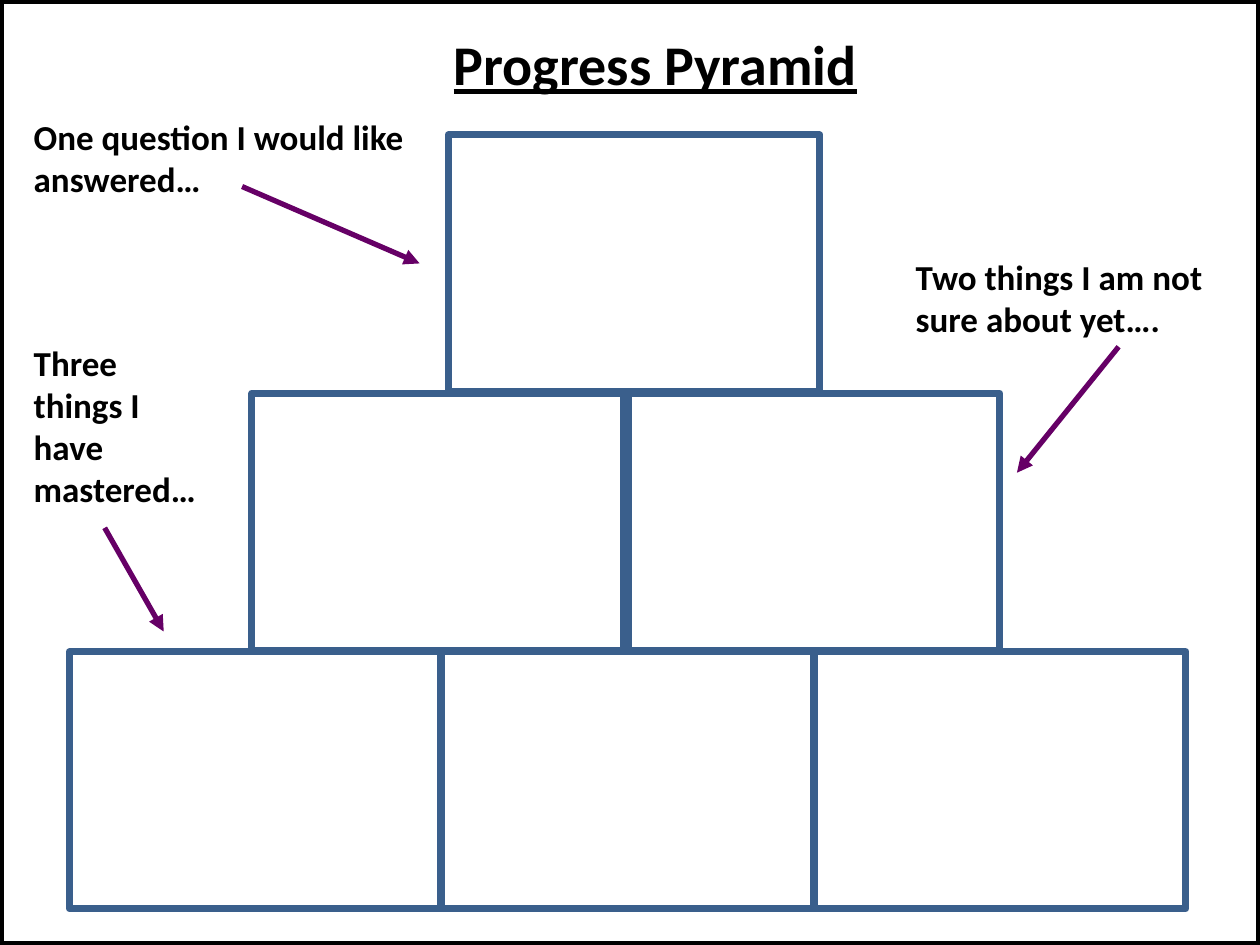
from lxml import etree
from pptx import Presentation
from pptx.dml.color import RGBColor
from pptx.enum.shapes import MSO_CONNECTOR, MSO_SHAPE
from pptx.enum.text import PP_ALIGN
from pptx.oxml.ns import qn
from pptx.util import Cm, Pt

RECTANGLE = MSO_SHAPE.RECTANGLE
STRAIGHT = MSO_CONNECTOR.STRAIGHT
LEFT, CENTER = PP_ALIGN.LEFT, PP_ALIGN.CENTER

BLACK = RGBColor(0x00, 0x00, 0x00)
PURPLE = RGBColor(0x66, 0x00, 0x66)
BLUE = RGBColor(0x3A, 0x5F, 0x8C)

PAGE_WIDTH, PAGE_HEIGHT = 25.4, 19.05

TITLE_FORMAT = {"name": "Calibri", "size": Pt(32), "bold": True, "underline": True}
PROMPT_FORMAT = {"name": "Calibri", "size": Pt(20), "bold": True}

# Each prompt: text, box (left, top, width, height), arrow start and end
# measured from the top left corner of the box
PROMPTS = [
    ("One question I would like answered…",
     (0.43, 2.21, 8.15, 1.96), (4.45, 1.55), (8.03, 3.1)),
    ("Two things I am not sure about yet….",
     (18.21, 5.03, 6.71, 1.96), (4.34, 1.96), (2.29, 4.5)),
    ("Three things I have mastered…",
     (0.43, 6.76, 4.06, 3.68), (1.68, 3.88), (2.87, 5.97)),
]

# Pyramid rows from the top: indent, number of blocks, step between blocks
ROWS = [(7.64, 1, 0), (3.68, 2, 7.59), (0, 3, 7.51)]
BLOCK_WIDTH, BLOCK_HEIGHT, ROW_STEP = 7.49, 5.18, 5.21


def add_text(page, box, text, font_format, align=LEFT):
    frame = page.shapes.add_textbox(*map(Cm, box)).text_frame
    frame.word_wrap = True
    para = frame.paragraphs[0]
    para.alignment = align
    span = para.add_run()
    span.text = text
    for name, value in font_format.items():
        setattr(span.font, name, value)
    span.font.color.rgb = BLACK


def add_outline(shapes, box, color, width):
    outline = shapes.add_shape(RECTANGLE, *map(Cm, box))
    outline.shadow.inherit = False
    outline.fill.background()
    outline.line.color.rgb = color
    outline.line.width = Pt(width)


def add_arrow(page, start, end):
    arrow = page.shapes.add_connector(STRAIGHT, *map(Cm, start + end))
    arrow.line.color.rgb = PURPLE
    arrow.line.width = Pt(3)
    head = etree.SubElement(arrow.line._get_or_add_ln(), qn("a:tailEnd"))
    head.set("type", "triangle")
    etree.SubElement(arrow._element.spPr, qn("a:effectLst"))


def add_prompt(page, text, box, start, end):
    left, top = box[:2]
    add_arrow(page, (left + start[0], top + start[1]), (left + end[0], top + end[1]))
    add_text(page, box, text, PROMPT_FORMAT)


def add_pyramid(page, left, top):
    pyramid = page.shapes.add_group_shape()
    for row, (indent, count, step) in enumerate(ROWS):
        for column in range(count):
            box = (left + indent + column * step, top + row * ROW_STEP,
                   BLOCK_WIDTH, BLOCK_HEIGHT)
            add_outline(pyramid.shapes, box, BLUE, 4)


def main():
    deck = Presentation()
    deck.slide_width, deck.slide_height = Cm(PAGE_WIDTH), Cm(PAGE_HEIGHT)
    page = deck.slides.add_slide(deck.slide_layouts[6])

    # Prompts with their arrows
    for prompt in PROMPTS:
        add_prompt(page, *prompt)

    # Blocks to write in
    add_pyramid(page, 1.4, 2.72)

    # Page border and title
    add_outline(page.shapes, (0, 0, PAGE_WIDTH, PAGE_HEIGHT), BLACK, 5)
    add_text(page, (7.29, 0.48, 11.84, 1.63), "Progress Pyramid", TITLE_FORMAT, CENTER)

    deck.save("out.pptx")


if __name__ == "__main__":
    main()
